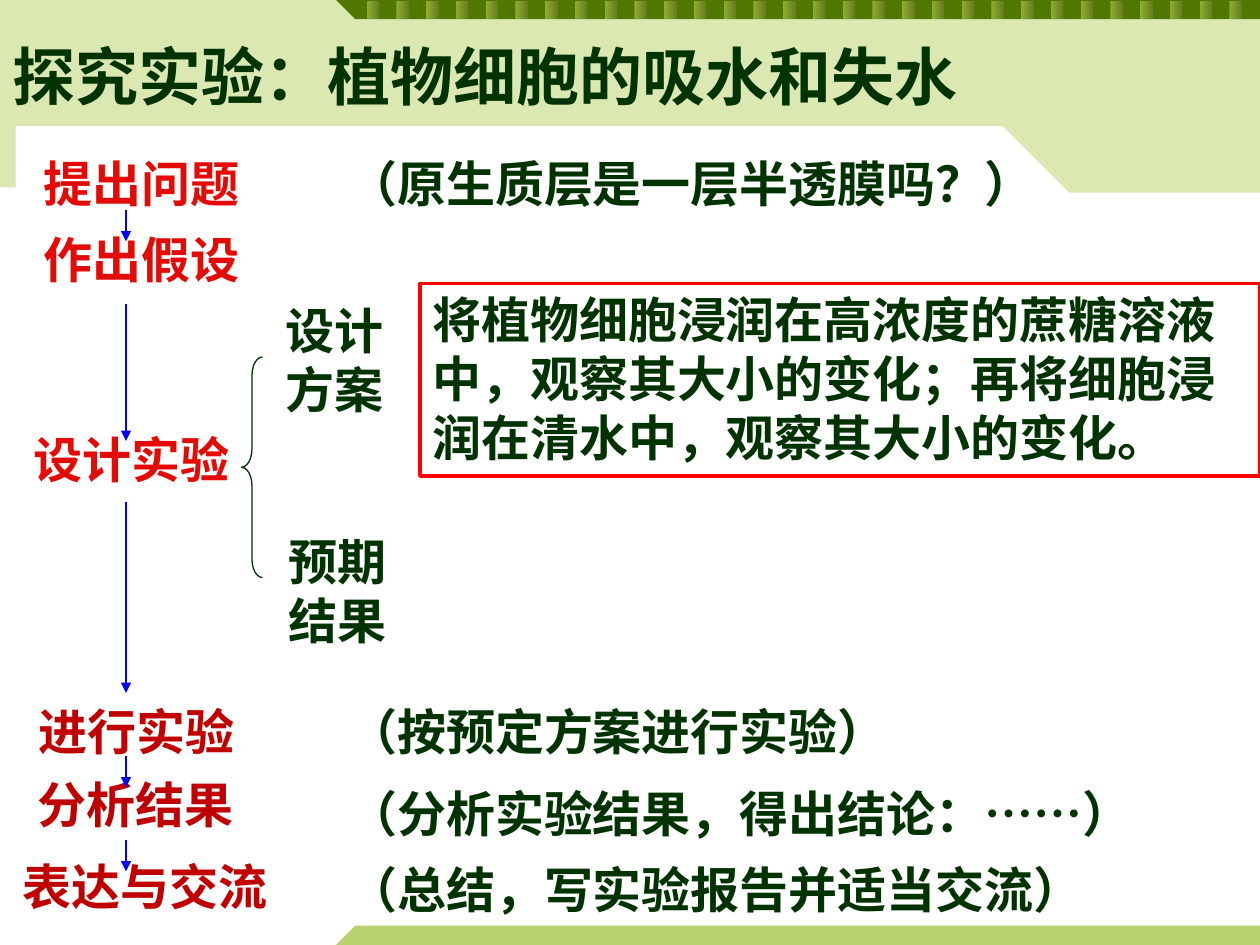
from lxml import etree
from pptx import Presentation
from pptx import util as u
from pptx.dml import color
from pptx.enum import lang, shapes, text
from pptx.oxml import ns

GREEN = "003300"
RED = "E40B06"
DARK_RED = "C00000"
BLUE = "0000FF"


def rgb(value):
    return color.RGBColor.from_string(value)


class Board:
    font_name = "Times New Roman"
    body_size = 28
    line_width = 0.75

    def __init__(self, slide):
        self.slide = slide

    def band(self, points, fill):
        corners = [(u.Pt(x), u.Pt(y)) for x, y in points]
        builder = self.slide.shapes.build_freeform(*corners[0])
        builder.add_line_segments(corners[1:], close=True)
        shape = builder.convert_to_shape()
        shape.shadow.inherit = False
        shape.fill.solid()
        shape.fill.fore_color.rgb = rgb(fill)
        shape.line.fill.background()

    def preset(self, kind, left, top, width, height, line=None, line_width=None):
        shape = self.slide.shapes.add_shape(
            kind, u.Pt(left), u.Pt(top), u.Pt(width), u.Pt(height))
        shape.shadow.inherit = False
        shape.fill.background()
        if line:
            shape.line.color.rgb = rgb(line)
            shape.line.width = u.Pt(line_width or self.line_width)
        else:
            shape.line.fill.background()
        return shape

    def peg(self, left, top, width, height):
        shape = self.preset(shapes.MSO_SHAPE.RECTANGLE, left, top, width, height)
        shape.fill.gradient()
        shape.fill.gradient_angle = 0
        for stop, shade in zip(shape.fill.gradient_stops, ("8FAD2F", "667C22")):
            stop.color.rgb = rgb(shade)

    def brace(self, left, top, width, height):
        shape = self.preset(shapes.MSO_SHAPE.LEFT_BRACE, left, top, width, height, GREEN)
        shape.adjustments[0] = 0.875
        shape.adjustments[1] = 0.5

    def set_text(self, shape, lines, font_color, size):
        frame = shape.text_frame
        frame.word_wrap = True
        frame.auto_size = text.MSO_AUTO_SIZE.SHAPE_TO_FIT_TEXT
        frame.vertical_anchor = text.MSO_ANCHOR.TOP
        frame.text = lines
        for paragraph in frame.paragraphs:
            paragraph.alignment = text.PP_ALIGN.LEFT
            paragraph.font.name = self.font_name
            paragraph.font.size = u.Pt(size)
            paragraph.font.bold = True
            paragraph.font.color.rgb = rgb(font_color)
            for run in paragraph.runs:
                run.font.language_id = lang.MSO_LANGUAGE_ID.SIMPLIFIED_CHINESE

    def label(self, lines, left, top, width, height=41, font_color=GREEN, size=body_size):
        shape = self.slide.shapes.add_textbox(
            u.Pt(left), u.Pt(top), u.Pt(width), u.Pt(height))
        self.set_text(shape, lines, font_color, size)

    def framed(self, lines, left, top, width, height):
        shape = self.preset(
            shapes.MSO_SHAPE.RECTANGLE, left, top, width, height, "FF0000", 2)
        self.set_text(shape, lines, GREEN, self.body_size)

    def down_arrow(self, x, top, bottom):
        connector = self.slide.shapes.add_connector(
            shapes.MSO_CONNECTOR.STRAIGHT, u.Pt(x), u.Pt(top), u.Pt(x), u.Pt(bottom))
        connector.line.color.rgb = rgb(BLUE)
        connector.line.width = u.Pt(self.line_width)
        properties = connector._element.spPr
        line = properties.find(ns.qn("a:ln"))
        etree.SubElement(line, ns.qn("a:tailEnd"), type="triangle")
        etree.SubElement(properties, ns.qn("a:effectLst"))


def main():
    presentation = Presentation()
    presentation.slide_width = u.Pt(720)
    presentation.slide_height = u.Pt(540)
    board = Board(presentation.slides.add_slide(presentation.slide_layouts[6]))

    board.band([(192, 540), (203, 529), (720, 529), (720, 540)], "BAD16F")
    board.band([(0, 107), (9, 107), (9, 72), (573, 72), (611, 110),
                (720, 110), (720, 0), (0, 0)], "DBE8B2")
    board.band([(192, 0), (203, 11), (720, 11), (720, 0)], "507800")
    for index in range(30):
        board.peg(209.5 + 17 * index, 0.5, 7.2, 10.5)

    board.label("探究实验：植物细胞的吸水和失水", 0, 18, 642, 50, size=36)

    steps = [
        ("提出问题", 18, 84, 186, RED),
        ("作出假设", 18, 127.5, 130, RED),
        ("设计实验", 12, 242, 132, RED),
        ("进行实验", 15, 397.5, 141, DARK_RED),
        ("分析结果", 14.5, 439, 138, DARK_RED),
        ("表达与交流", 6, 486, 174, DARK_RED),
    ]
    for name, left, top, width, font_color in steps:
        board.label(name, left, top, width, font_color=font_color)
    for top, bottom in [(120, 138), (174, 252), (287, 396), (432, 450), (480, 498)]:
        board.down_arrow(72, top, bottom)

    details = [
        ("（原生质层是一层半透膜吗？）", 84, 435),
        ("（按预定方案进行实验）", 397.5, 356),
        ("（分析实验结果，得出结论：……）", 444, 504),
        ("（总结，写实验报告并适当交流）", 487.5, 459),
    ]
    for detail, top, width in details:
        board.label(detail, 192, top, width)

    board.label("设计\n方案", 156, 168, 96, 74)
    board.brace(138, 204, 12, 126)
    board.label("预期结果", 158, 300, 84, 74)
    board.framed(
        "将植物细胞浸润在高浓度的蔗糖溶液中，观察其大小的变化；"
        "再将细胞浸润在清水中，观察其大小的变化。", 240, 162, 480, 110)

    presentation.save("out.pptx")


if __name__ == "__main__":
    main()
